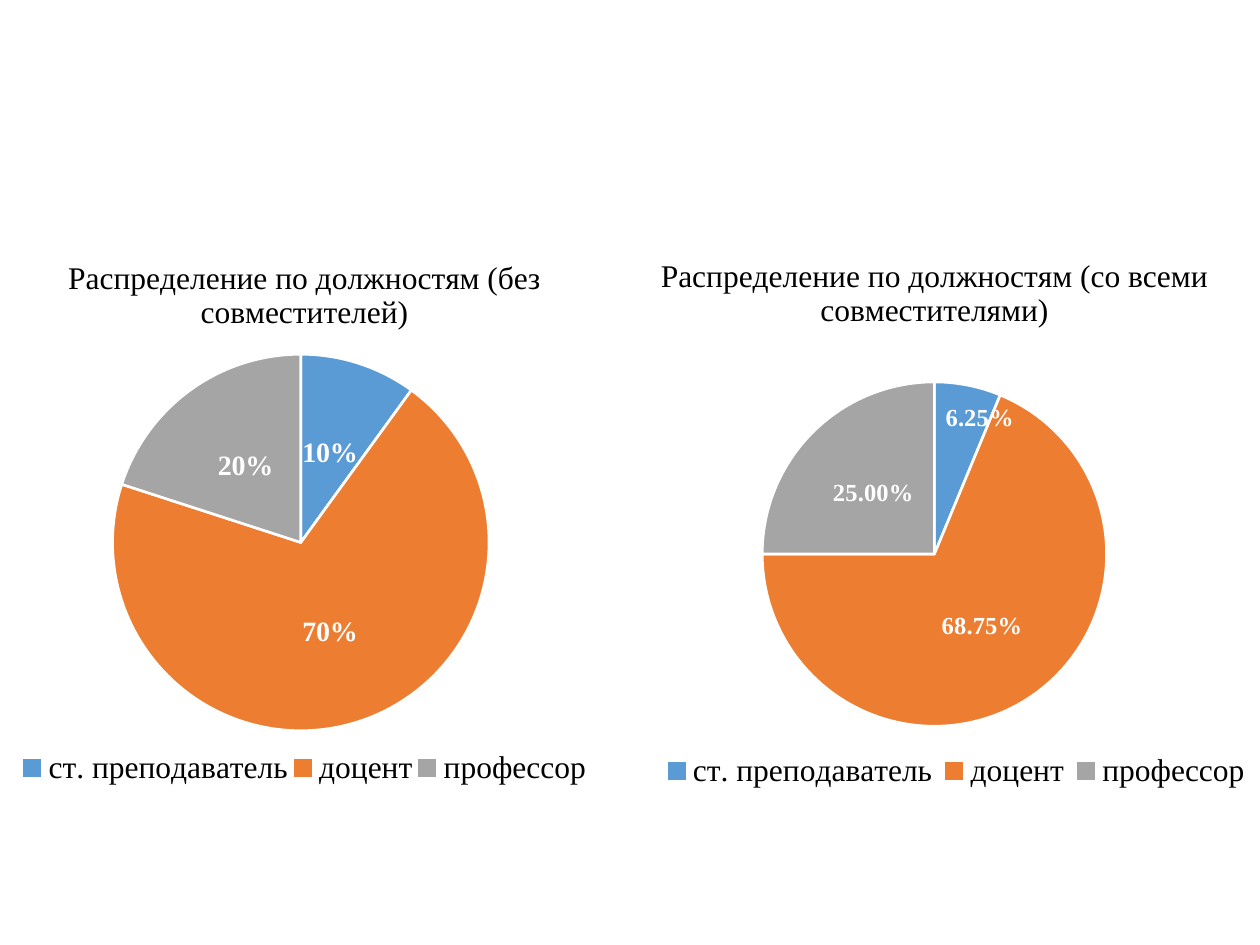
from lxml.etree import SubElement
from pptx import Presentation
from pptx.chart.data import CategoryChartData
from pptx.dml.color import RGBColor
from pptx.enum.chart import XL_CHART_TYPE, XL_LABEL_POSITION, XL_LEGEND_POSITION
from pptx.oxml import parse_xml
from pptx.oxml.ns import nsdecls, qn
from pptx.util import Pt

COLORS = {
    "text": "000000",
    "label": "FFFFFF",
    "ст. преподаватель": "5B9BD5",
    "доцент": "ED7D31",
    "профессор": "A5A5A5",
}
POSITIONS = ["ст. преподаватель", "доцент", "профессор"]
CHARTS = [
    {
        "title": "Распределение по должностям (без совместителей)",
        "left": -31, "top": 134,
        "values": [0.1, 0.7, 0.2], "format": "0%", "label_size": 16,
        "plot": {"x": 0.23, "y": 0.21, "w": 0.53, "h": 0.66},
        "legend": {"x": 0.1, "y": 0.89, "w": 0.8, "h": 0.09},
        "first_label_shift": None,
    },
    {
        "title": "Распределение по должностям (со всеми совместителями)",
        "left": 329, "top": 132.5,
        "values": [0.0625, 0.6875, 0.25], "format": "0.00%", "label_size": 14,
        "plot": {"x": 0.26, "y": 0.26, "w": 0.48, "h": 0.61},
        "legend": {"x": 0.11, "y": 0.9, "w": 0.84, "h": 0.09},
        "first_label_shift": {"x": 0.04, "y": -0.09},
    },
]


def style_font(font, size, color, bold=False, name="Times New Roman"):
    font.name = name
    font.size = Pt(size)
    font.bold = bold
    font.color.rgb = RGBColor.from_string(COLORS[color])


def place(element, after, box, edges=()):
    """Give a chart part a manual layout, in fractions of the chart."""
    for old_layout in element.findall(qn("c:layout")):
        element.remove(old_layout)
    layout = parse_xml(f"<c:layout {nsdecls('c')}><c:manualLayout/></c:layout>")
    settings = [*edges, *box.items()]
    for tag, value in settings:
        SubElement(layout[0], qn(f"c:{tag}")).set("val", str(value))
    if after is None:
        element.insert(0, layout)
    else:
        element.find(qn(after)).addnext(layout)


presentation = Presentation()
presentation.slide_width = Pt(720)
presentation.slide_height = Pt(540)
slide = presentation.slides.add_slide(presentation.slide_layouts[6])
edge_modes = [("xMode", "edge"), ("yMode", "edge")]

for item in CHARTS:
    chart_data = CategoryChartData(number_format=item["format"])
    chart_data.categories = POSITIONS
    chart_data.add_series("Series 1", item["values"])
    chart = slide.shapes.add_chart(
        XL_CHART_TYPE.PIE, Pt(item["left"]), Pt(item["top"]), Pt(410), Pt(326), chart_data
    ).chart
    style_font(chart.font, 10, "text", name="Calibri")

    chart.has_title = True
    title_frame = chart.chart_title.text_frame
    title_frame.text = item["title"]
    style_font(title_frame.paragraphs[0].runs[0].font, 18, "text")
    chart.chart_title.include_in_layout = False

    chart.has_legend = True
    legend = chart.legend
    legend.position = XL_LEGEND_POSITION.BOTTOM
    legend.include_in_layout = False
    style_font(legend.font, 18, "text")

    plot = chart.plots[0]
    plot.vary_by_categories = True
    series = plot.series[0]
    for index, position in enumerate(POSITIONS):
        slice_format = series.points[index].format
        slice_format.fill.solid()
        slice_format.fill.fore_color.rgb = RGBColor.from_string(COLORS[position])
        slice_format.line.color.rgb = RGBColor.from_string(COLORS["label"])
        slice_format.line.width = Pt(1.5)

    labels = series.data_labels
    labels.show_value = True
    labels.show_percentage = False
    labels.number_format = item["format"]
    labels.number_format_is_linked = False
    labels.position = XL_LABEL_POSITION.CENTER
    style_font(labels.font, item["label_size"], "label", bold=True)

    chart_element = chart.element
    plot_area = chart_element.find(".//" + qn("c:plotArea"))
    place(plot_area, None, item["plot"], [("layoutTarget", "inner"), *edge_modes])
    place(chart_element.find(".//" + qn("c:legend")), "c:legendPos", item["legend"], edge_modes)

    if item["first_label_shift"]:
        first_label = series.points[0].data_label
        style_font(first_label.font, item["label_size"], "label", bold=True)
        first_label.position = XL_LABEL_POSITION.CENTER
        label_element = chart_element.find(".//" + qn("c:dLbl"))
        place(label_element, "c:idx", item["first_label_shift"])

presentation.save("out.pptx")
